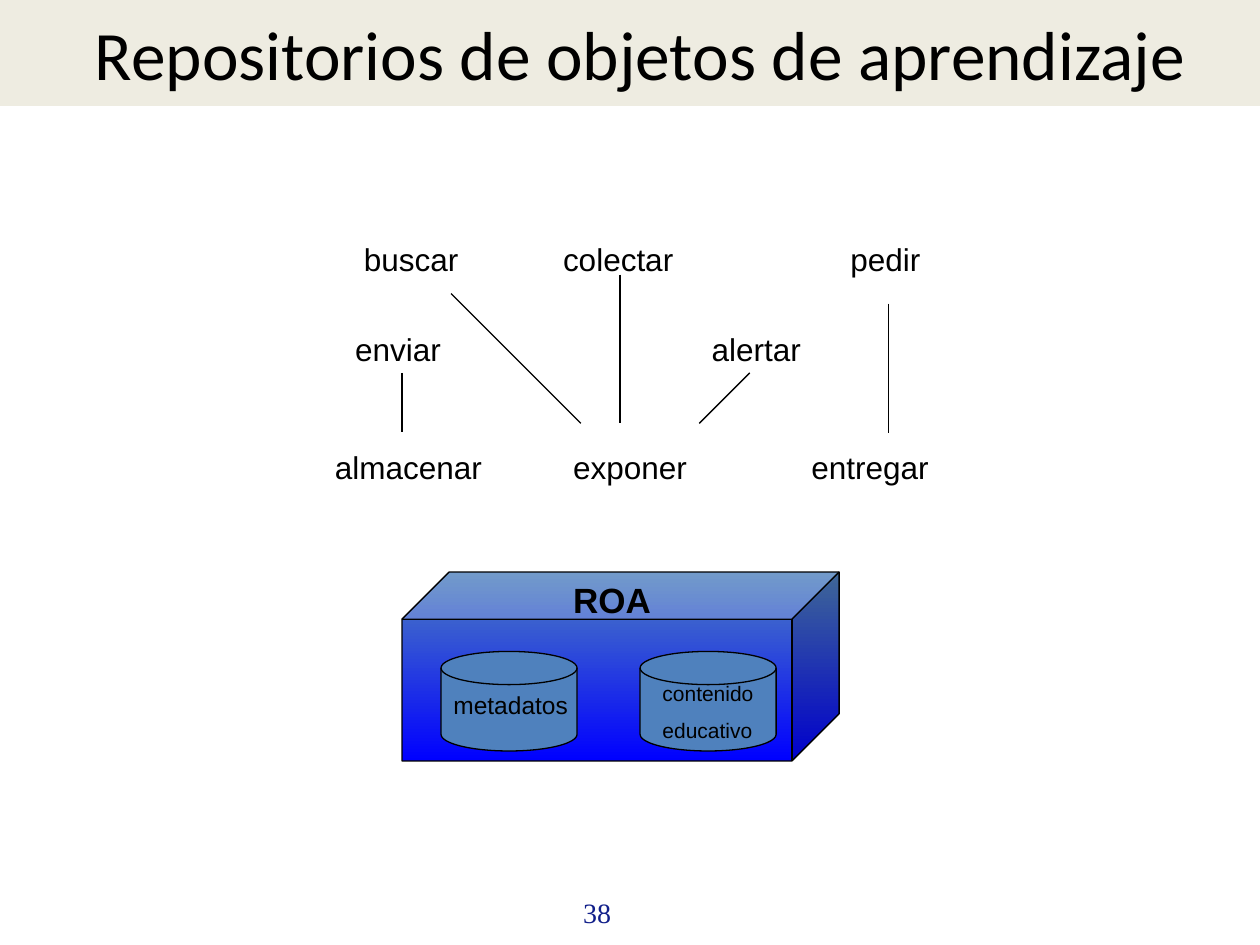
from dataclasses import dataclass

from lxml import etree
from pptx import Presentation
from pptx.dml.color import RGBColor
from pptx.enum import shapes, text
from pptx.oxml.ns import qn
from pptx.util import Inches, Pt


@dataclass(frozen=True)
class Theme:
    banner: RGBColor = RGBColor.from_string("EEECE1")
    ink: RGBColor = RGBColor.from_string("000000")
    disk: RGBColor = RGBColor.from_string("4F81BD")
    deep_blue: RGBColor = RGBColor.from_string("0000FF")
    number: RGBColor = RGBColor.from_string("111F8A")
    title_font: str = "Calibri"
    body_font: str = "Arial"
    number_font: str = "Times New Roman"
    title_size: float = 39.6
    repository_size: float = 20
    label_size: float = 18
    number_size: float = 16
    metadata_size: float = 14
    content_size: float = 12
    line_width: float = 0.75


@dataclass(frozen=True)
class Label:
    wording: str
    left: float
    top: float
    width: float
    height: float = 0.4
    size: float = Theme.label_size
    bold: bool = False


@dataclass(frozen=True)
class Link:
    start: tuple[float, float]
    end: tuple[float, float]


THEME = Theme()
TOP_ROW, MIDDLE_ROW, BOTTOM_ROW = 1.86, 2.57, 3.51
DISK_TOP = 5.17

SERVICES = [
    Label("exponer", 4.45, BOTTOM_ROW, 1.26),
    Label("almacenar", 2.56, BOTTOM_ROW, 1.42),
    Label("entregar", 6.34, BOTTOM_ROW, 1.18),
    Label("pedir", 6.65, TOP_ROW, 0.87),
    Label("enviar", 2.72, MIDDLE_ROW, 1.02),
    Label("buscar", 2.79, TOP_ROW, 1.02),
    Label("alertar", 5.55, MIDDLE_ROW, 1.02),
    Label("colectar", 4.37, TOP_ROW, 1.18),
]
LINKS = [
    Link((3.19, 2.96), (3.19, 3.43)),
    Link((7.05, 2.41), (7.05, 3.44)),
    Link((3.58, 2.33), (4.61, 3.36)),
    Link((4.92, 2.18), (4.92, 3.36)),
    Link((5.95, 2.96), (5.55, 3.36)),
]
DISK_LEFTS = [3.5, 5.08]
REPOSITORY_LABELS = [
    Label("metadatos", 3.5, 5.43, 1.16, 0.33, THEME.metadata_size),
    Label("contenido\neducativo", 5.16, 5.35, 1, 0.6, THEME.content_size),
    Label("ROA", 4.45, 4.54, 0.93, 0.43, THEME.repository_size, True),
]


def write(frame, wording: str, *, size: float, font: str = THEME.body_font,
          color: RGBColor = THEME.ink, bold: bool = False, align=None) -> None:
    """Fill a text frame, one paragraph per line, half a line apart."""
    frame.word_wrap = True
    for index, line in enumerate(wording.split("\n")):
        paragraph = frame.add_paragraph() if index else frame.paragraphs[0]
        if index:
            paragraph.space_before = Pt(round(size * 0.58))
        paragraph.alignment = align
        run = paragraph.add_run()
        run.text = line
        run.font.size = Pt(size)
        run.font.name = font
        run.font.bold = bold
        run.font.color.rgb = color


def add_label(container, label: Label, **style) -> None:
    box = container.add_textbox(Inches(label.left), Inches(label.top),
                                Inches(label.width), Inches(label.height))
    write(box.text_frame, label.wording, size=label.size, bold=label.bold, **style)


def add_link(container, link: Link) -> None:
    connector = container.add_connector(
        shapes.MSO_CONNECTOR.STRAIGHT,
        *(Inches(value) for value in link.start + link.end))
    connector.line.color.rgb = THEME.ink
    connector.line.width = Pt(THEME.line_width)
    etree.SubElement(connector.element.spPr, qn("a:effectLst"))


def add_outlined(container, kind, left: float, top: float, width: float, height: float):
    shape = container.add_shape(kind, Inches(left), Inches(top), Inches(width), Inches(height))
    shape.shadow.inherit = False
    shape.line.color.rgb = THEME.ink
    shape.line.width = Pt(THEME.line_width)
    return shape


def add_title(slide) -> None:
    title = slide.shapes.title
    title.left, title.top = Inches(0), Inches(0)
    title.width, title.height = Inches(10), Inches(0.84)
    title.fill.solid()
    title.fill.fore_color.rgb = THEME.banner
    frame = title.text_frame
    frame.auto_size = text.MSO_AUTO_SIZE.NONE
    frame.vertical_anchor = text.MSO_ANCHOR.MIDDLE
    frame.margin_left, frame.margin_right = Inches(0.55), Inches(0.39)
    frame.margin_top = frame.margin_bottom = Inches(0.05)
    write(frame, "Repositorios de objetos de aprendizaje", size=THEME.title_size,
          font=THEME.title_font, align=text.PP_ALIGN.CENTER)


def add_repository(slide) -> None:
    group = slide.shapes.add_group_shape().shapes
    cube = add_outlined(group, shapes.MSO_SHAPE.CUBE, 3.19, 4.54, 3.47, 1.5)
    cube.adjustments[0] = 0.25
    cube.fill.gradient()
    cube.fill.gradient_angle = 270
    for stop, color in zip(cube.fill.gradient_stops, (THEME.disk, THEME.deep_blue)):
        stop.color.rgb = color
    for left in DISK_LEFTS:
        disk = add_outlined(group, shapes.MSO_SHAPE.FLOWCHART_MAGNETIC_DISK,
                            left, DISK_TOP, 1.08, 0.79)
        disk.fill.solid()
        disk.fill.fore_color.rgb = THEME.disk
    for label in REPOSITORY_LABELS:
        add_label(group, label)


def main() -> None:
    presentation = Presentation()
    presentation.slide_width, presentation.slide_height = Inches(10), Inches(7.5)
    title_only = presentation.slide_layouts[5]
    slide = presentation.slides.add_slide(title_only)
    add_title(slide)
    add_label(slide.shapes, Label("38", 4.53, 7.06, 0.67, 0.37, THEME.number_size),
              font=THEME.number_font, color=THEME.number)
    for label in SERVICES:
        add_label(slide.shapes, label)
    add_repository(slide)
    for link in LINKS:
        add_link(slide.shapes, link)
    presentation.save("out.pptx")


if __name__ == "__main__":
    main()
